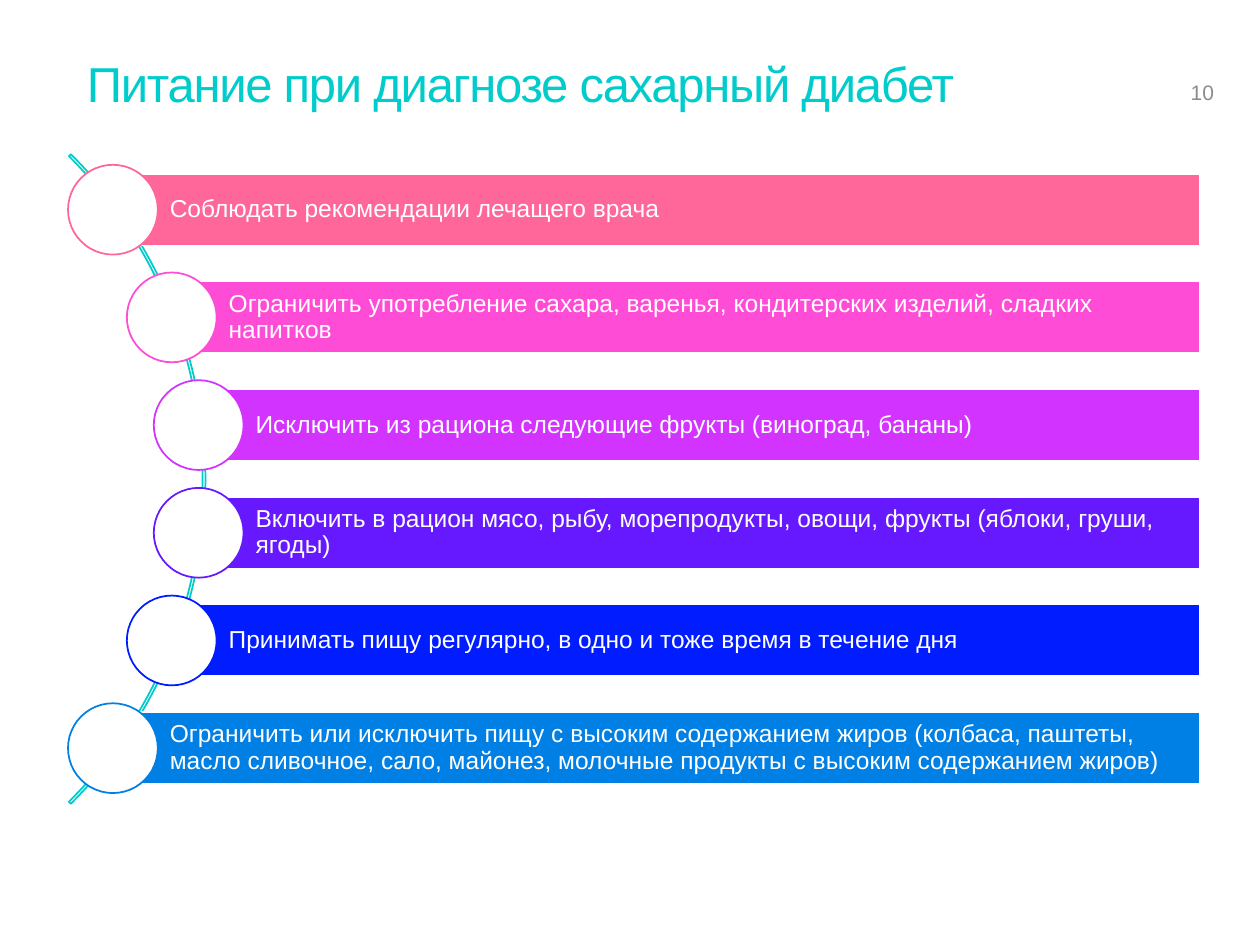
from pptx import Presentation
from pptx.dml.color import RGBColor
from pptx.enum.shapes import MSO_SHAPE
from pptx.enum.text import MSO_ANCHOR, PP_ALIGN
from pptx.util import Pt

RECTANGLE, OVAL, ARC = MSO_SHAPE.RECTANGLE, MSO_SHAPE.OVAL, MSO_SHAPE.BLOCK_ARC
TOP, MIDDLE, BOTTOM = MSO_ANCHOR.TOP, MSO_ANCHOR.MIDDLE, MSO_ANCHOR.BOTTOM
LEFT = PP_ALIGN.LEFT

COLORS = {
    "title": "00CCCC",
    "number": "8C8C90",
    "white": "FFFFFF",
    "rose": "FF6699",
    "pink": "FF4CD7",
    "purple": "D233FF",
    "violet": "6619FF",
    "blue": "001CFF",
    "azure": "007FE5",
}
ADVICE = [
    ("rose", 0, "Соблюдать рекомендации лечащего врача"),
    ("pink", 33.6, "Ограничить употребление сахара, варенья, кондитерских изделий, "
                   "сладких напитков"),
    ("purple", 49, "Исключить из рациона следующие фрукты (виноград, бананы)"),
    ("violet", 49, "Включить в рацион мясо, рыбу, морепродукты, овощи, фрукты "
                   "(яблоки, груши, ягоды)"),
    ("blue", 33.6, "Принимать пищу регулярно, в одно и тоже время в течение дня"),
    ("azure", 0, "Ограничить или исключить пищу с высоким содержанием жиров "
                 "(колбаса, паштеты, масло сливочное, сало, майонез, молочные "
                 "продукты с высоким содержанием жиров)"),
]
BAR_HEIGHT = 41
CIRCLE_SIZE = 51.3
ARC_SIZE = 524.9


def rgb(name):
    return RGBColor.from_string(COLORS[name])


def write_text(shape, text, size, color, anchor, insets, spacing=1.0):
    frame = shape.text_frame
    frame.word_wrap = True
    frame.vertical_anchor = anchor
    left, top, right, bottom = insets
    frame.margin_left, frame.margin_top = Pt(left), Pt(top)
    frame.margin_right, frame.margin_bottom = Pt(right), Pt(bottom)
    frame.text = text
    para = frame.paragraphs[0]
    para.alignment = LEFT
    para.line_spacing = spacing
    span = para.runs[0]
    span.font.name = "Arial"
    span.font.size = Pt(size)
    span.font.color.rgb = rgb(color)
    return span


def add_outlined(page, kind, left, top, width, height, fill, line):
    shape = page.shapes.add_shape(kind, Pt(left), Pt(top), Pt(width), Pt(height))
    shape.shadow.inherit = False
    if fill:
        shape.fill.solid()
        shape.fill.fore_color.rgb = rgb(fill)
    else:
        shape.fill.background()
    shape.line.color.rgb = rgb(line)
    shape.line.width = Pt(1)
    return shape


def add_title(page, left, top, width, height):
    box = page.shapes.add_textbox(Pt(left), Pt(top), Pt(width), Pt(height))
    span = write_text(box, "Питание при диагнозе сахарный диабет", 28, "title",
                      TOP, (0, 3.6, 0, 3.6), Pt(32))
    span.font._element.set("spc", "-70")


def add_page_number(page, left, top, width, height):
    box = page.shapes.add_textbox(Pt(left), Pt(top), Pt(width), Pt(height))
    write_text(box, "10", 12, "number", BOTTOM, (0, 2.9, 0, 2.9))


def add_advice_list(page, left, top, width, height):
    arc = add_outlined(page, ARC, left - 446.4, top + (height - ARC_SIZE) / 2,
                       ARC_SIZE, ARC_SIZE, None, "title")
    for index, value in enumerate((189, 27, 0.003)):
        arc.adjustments[index] = value

    pitch = (height - CIRCLE_SIZE) / (len(ADVICE) - 1)
    radius = CIRCLE_SIZE / 2
    for index, (color, indent, text) in enumerate(ADVICE):
        center_x = left + radius + indent
        center_y = top + radius + index * pitch
        bar = add_outlined(page, RECTANGLE, center_x, center_y - BAR_HEIGHT / 2,
                           left + width - center_x, BAR_HEIGHT, color, "white")
        write_text(bar, text, 14, "white", MIDDLE, (32.5, 2.8, 2.8, 2.8), 0.9)
        add_outlined(page, OVAL, center_x - radius, center_y - radius,
                     CIRCLE_SIZE, CIRCLE_SIZE, "white", color)


def main():
    deck = Presentation()
    deck.slide_width, deck.slide_height = Pt(720), Pt(540)
    page = deck.slides.add_slide(deck.slide_layouts[6])
    add_title(page, 49.7, 28.8, 620.6, 74.2)
    add_page_number(page, 680.4, 28.8, 27.4, 33.8)
    add_advice_list(page, 38.9, 94.2, 647, 359)
    deck.save("out.pptx")


if __name__ == "__main__":
    main()
